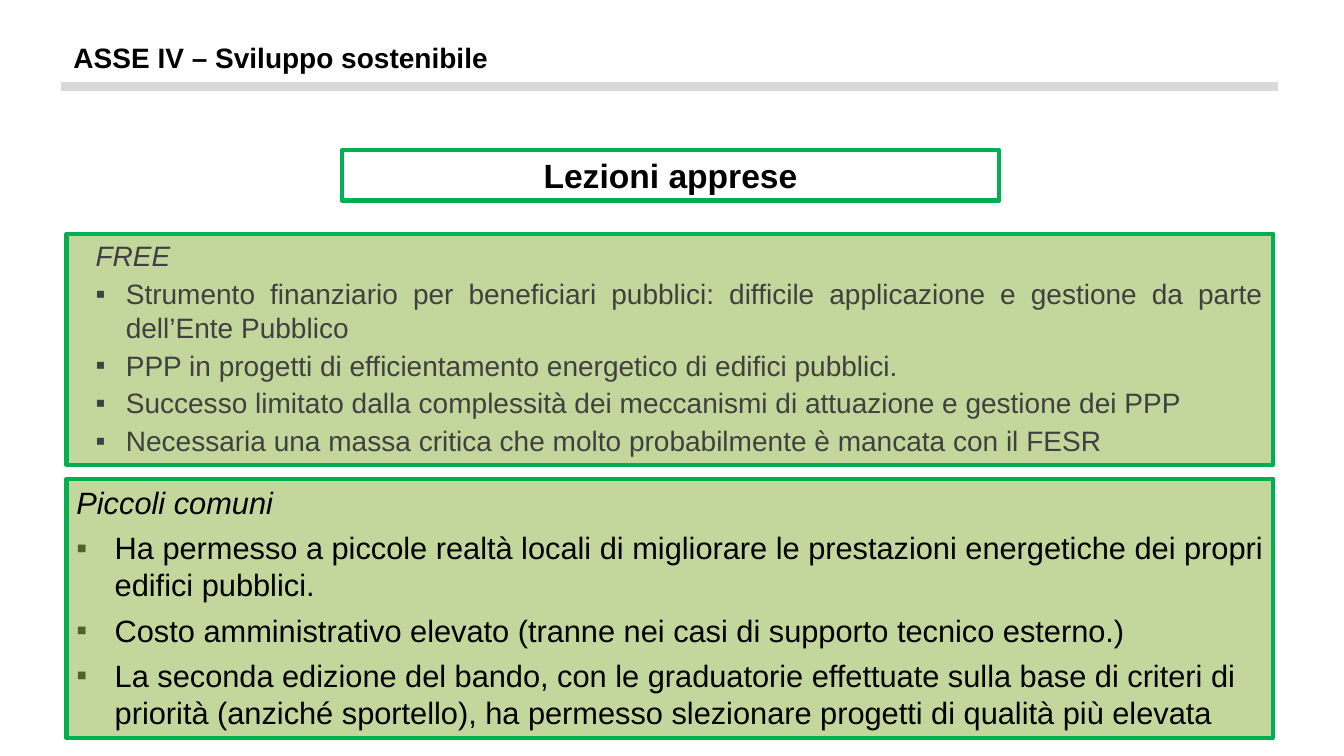
from dataclasses import dataclass

from lxml import etree
from pptx import Presentation
from pptx.dml.color import RGBColor
from pptx.enum import shapes, text
from pptx.oxml.ns import qn
from pptx.util import Inches, Pt


@dataclass(frozen=True)
class Theme:
    font: str = "Arial"
    black: str = "000000"
    grey: str = "404040"
    rule: str = "D9D9D9"
    white: str = "FFFFFF"
    panel: str = "C3D69B"
    border: str = "00B050"
    bullet: str = "4F6228"
    heading_size: int = 20
    banner_size: int = 24
    free_size: int = 20
    towns_size: int = 22
    border_width: int = 3
    rule_width: int = 6


class SlideBuilder:
    def __init__(self, slide, theme):
        self.slide = slide
        self.theme = theme

    def rule(self, left, right, y):
        line = self.slide.shapes.add_connector(
            shapes.MSO_CONNECTOR.STRAIGHT, Inches(left), Inches(y), Inches(right), Inches(y))
        line.line.color.rgb = RGBColor.from_string(self.theme.rule)
        line.line.width = Pt(self.theme.rule_width)
        properties = line._element.find(qn("p:spPr"))
        etree.SubElement(properties, qn("a:effectLst"))

    def heading(self, words, left, top, width, height):
        box = self.slide.shapes.add_textbox(*map(Inches, (left, top, width, height)))
        box.text_frame.word_wrap = False
        self.paragraph(box.text_frame.paragraphs[0], words, self.theme.heading_size,
                       self.theme.black, text.PP_ALIGN.CENTER, bold=True)

    def box(self, left, top, width, height, fill, anchor=text.MSO_ANCHOR.TOP):
        """Add a green-bordered rectangle and return its text frame."""
        rectangle = self.slide.shapes.add_shape(
            shapes.MSO_SHAPE.RECTANGLE, *map(Inches, (left, top, width, height)))
        rectangle.shadow.inherit = False
        rectangle.fill.solid()
        rectangle.fill.fore_color.rgb = RGBColor.from_string(fill)
        rectangle.line.color.rgb = RGBColor.from_string(self.theme.border)
        rectangle.line.width = Pt(self.theme.border_width)
        frame = rectangle.text_frame
        frame.word_wrap = True
        frame.vertical_anchor = anchor
        return frame

    def paragraph(self, paragraph, words, size, color, align, after=0, bold=False, italic=False):
        paragraph.alignment = align
        paragraph.space_after = Pt(after)
        run = paragraph.add_run()
        run.text = words
        run.font.name = self.theme.font
        run.font.size = Pt(size)
        run.font.bold = bold
        run.font.italic = italic
        run.font.color.rgb = RGBColor.from_string(color)

    def indent(self, paragraph, left, hanging=0, bullet_color=None):
        """Set the margins; a hanging indent also gets a square bullet."""
        properties = paragraph._p.get_or_add_pPr()
        properties.set("marL", str(Inches(left)))
        properties.set("indent", str(-Inches(hanging)))
        if hanging:
            color = etree.SubElement(properties, qn("a:buClr"))
            etree.SubElement(color, qn("a:srgbClr"), val=bullet_color)
            etree.SubElement(properties, qn("a:buFont"), typeface=self.theme.font)
            etree.SubElement(properties, qn("a:buChar"), char="▪")

    def banner(self, words, left, top, width, height):
        frame = self.box(left, top, width, height, self.theme.white, text.MSO_ANCHOR.MIDDLE)
        self.paragraph(frame.paragraphs[0], words, self.theme.banner_size,
                       self.theme.black, text.PP_ALIGN.CENTER, bold=True)

    def lessons(self, topic, points, top, height, size, color, bullet_color,
                align, after, topic_left, point_left, hanging):
        """Add a full-width panel: an italic topic over bulleted points."""
        frame = self.box(0.66, top, 11.97, height, self.theme.panel)
        title = frame.paragraphs[0]
        self.paragraph(title, topic, size, color, align, after, italic=True)
        self.indent(title, topic_left)
        for point in points:
            item = frame.add_paragraph()
            self.paragraph(item, point, size, color, align, after)
            self.indent(item, point_left, hanging, bullet_color)


FREE_LESSONS = [
    "Strumento finanziario per beneficiari pubblici: difficile applicazione e gestione "
    "da parte dell’Ente Pubblico",
    "PPP in progetti di efficientamento energetico di edifici pubblici.",
    "Successo limitato dalla complessità dei meccanismi di attuazione e gestione dei PPP",
    "Necessaria una massa critica che molto probabilmente è mancata con il FESR",
]
TOWN_LESSONS = [
    "Ha permesso a piccole realtà locali di migliorare le prestazioni energetiche "
    "dei propri edifici pubblici.",
    "Costo amministrativo elevato (tranne nei casi di supporto tecnico esterno.)",
    "La seconda edizione del bando, con le graduatorie effettuate sulla base di criteri "
    "di priorità (anziché sportello), ha permesso slezionare progetti di qualità più elevata",
]


def main():
    deck = Presentation()
    deck.slide_width, deck.slide_height = Inches(13.33), Inches(7.5)
    theme = Theme()
    builder = SlideBuilder(deck.slides.add_slide(deck.slide_layouts[6]), theme)

    builder.rule(0.61, 12.68, 0.86)
    builder.heading("ASSE IV – Sviluppo sostenibile", 0.61, 0.35, 4.35, 0.45)
    builder.lessons("Piccoli comuni", TOWN_LESSONS, top=4.75, height=2.57,
                    size=theme.towns_size, color=theme.black, bullet_color=theme.bullet,
                    align=text.PP_ALIGN.LEFT, after=6,
                    topic_left=0, point_left=0.38, hanging=0.38)
    builder.lessons("FREE", FREE_LESSONS, top=2.32, height=2.29,
                    size=theme.free_size, color=theme.grey, bullet_color=theme.grey,
                    align=text.PP_ALIGN.JUSTIFY, after=3,
                    topic_left=0.19, point_left=0.49, hanging=0.3)
    builder.banner("Lezioni apprese", 3.39, 1.49, 6.52, 0.5)
    deck.save("out.pptx")


if __name__ == "__main__":
    main()
